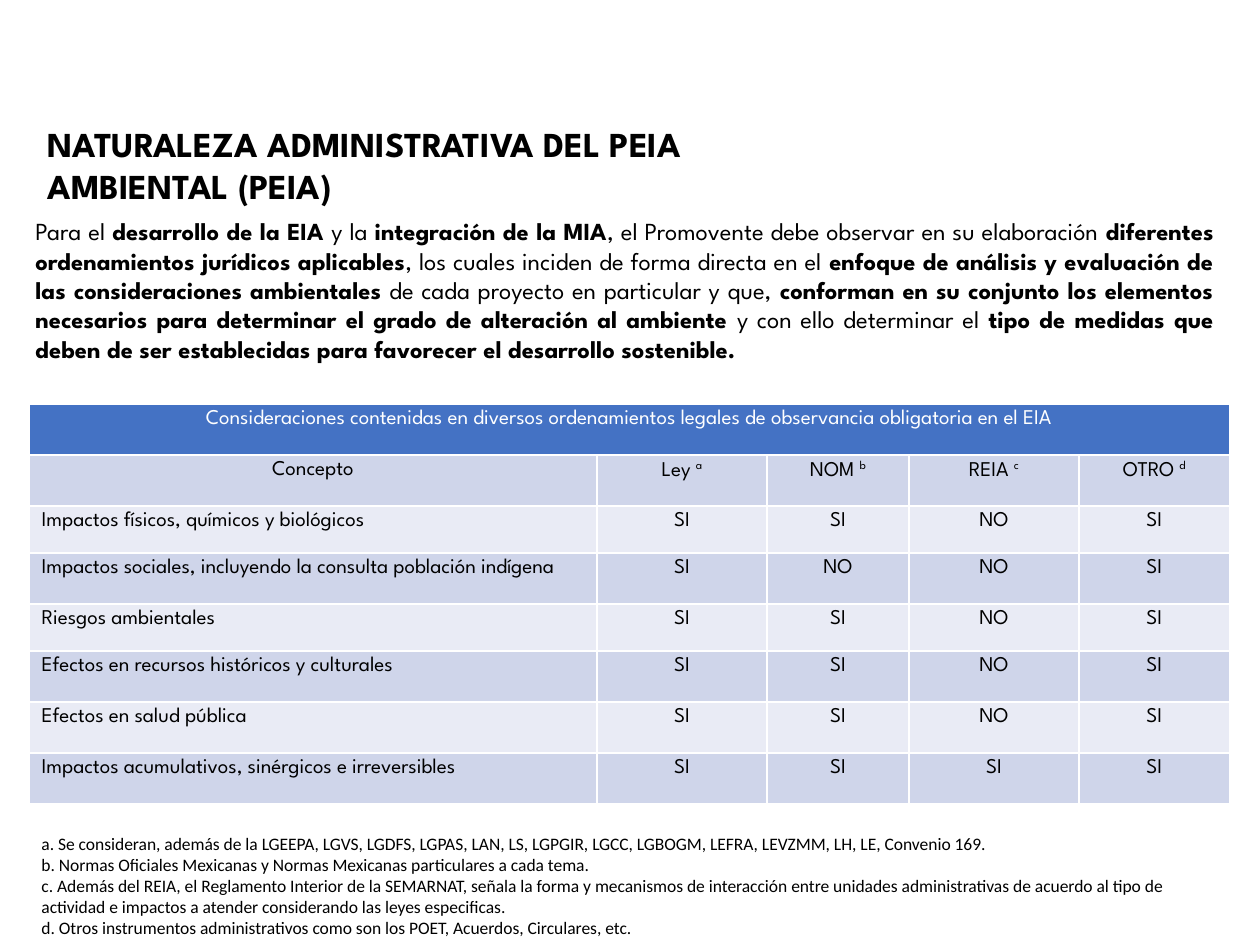
from dataclasses import dataclass

from lxml.etree import SubElement
from pptx import Presentation
from pptx.dml.color import RGBColor
from pptx.enum.shapes import MSO_SHAPE
from pptx.enum.text import MSO_ANCHOR, PP_ALIGN
from pptx.oxml.ns import qn
from pptx.util import Emu, Pt

PX = 914400 / 126


def px(length):
    """Turn whole pixels into EMU."""
    return Emu(round(length * PX))


@dataclass(frozen=True)
class Theme:
    """Colours, fonts and type sizes of the slide."""
    ink: str = "000000"
    paper: str = "FFFFFF"
    header: str = "4472C4"
    bands: tuple = ("CFD5EA", "E9EBF5")
    display: str = "League Spartan"
    small_print: str = "Calibri"
    title_size: int = 20
    body_size: int = 14
    table_size: int = 12
    small_size: int = 10


class SlideBuilder:
    """Draws each kind of element on one slide in one style."""

    def __init__(self, slide, theme):
        """Keep the slide and its theme."""
        self.slide = slide
        self.theme = theme

    def style(self, paragraph, size, font=None, color=None, bold=False, align=PP_ALIGN.LEFT):
        """Set the alignment and font of a paragraph."""
        paragraph.alignment = align
        paragraph.font.name = font or self.theme.display
        paragraph.font.size = Pt(size)
        paragraph.font.bold = bold
        paragraph.font.color.rgb = RGBColor.from_string(color or self.theme.ink)

    def lines(self, frame, texts, size, **look):
        """Write one styled paragraph for each text."""
        frame.word_wrap = True
        for index, text in enumerate(texts):
            paragraph = frame.add_paragraph() if index else frame.paragraphs[0]
            paragraph.text = text
            self.style(paragraph, size, **look)

    def title(self, box, texts):
        """Add the bold heading."""
        frame = self.slide.shapes.add_textbox(*map(px, box)).text_frame
        self.lines(frame, texts, self.theme.title_size, bold=True)

    def body(self, box, phrases):
        """Add a justified paragraph that alternates regular and bold phrases."""
        frame = self.slide.shapes.add_textbox(*map(px, box)).text_frame
        frame.word_wrap = True
        paragraph = frame.paragraphs[0]
        self.style(paragraph, self.theme.body_size, align=PP_ALIGN.JUSTIFY)
        for index, phrase in enumerate(phrases):
            run = paragraph.add_run()
            run.text = phrase
            run.font.bold = index % 2 == 1

    def footnotes(self, box, texts):
        """Add the footnotes on a plain rectangle."""
        panel = self.slide.shapes.add_shape(MSO_SHAPE.RECTANGLE, *map(px, box))
        panel.shadow.inherit = False
        panel.fill.solid()
        panel.fill.fore_color.rgb = RGBColor.from_string(self.theme.paper)
        panel.line.fill.background()
        panel.text_frame.vertical_anchor = MSO_ANCHOR.TOP
        self.lines(panel.text_frame, texts, self.theme.small_size, font=self.theme.small_print)

    def cell(self, cell, text, fill, mark="", **look):
        """Fill, border and write one cell, with an optional superscript mark."""
        properties = cell._tc.get_or_add_tcPr()
        for side in ("a:lnL", "a:lnR", "a:lnT", "a:lnB"):
            border = SubElement(properties, qn(side), w=str(Pt(1)))
            SubElement(SubElement(border, qn("a:solidFill")), qn("a:srgbClr"), val=self.theme.paper)
        cell.fill.solid()
        cell.fill.fore_color.rgb = RGBColor.from_string(fill)
        self.lines(cell.text_frame, [text], self.theme.table_size, **look)
        if mark:
            superscript = cell.text_frame.paragraphs[0].add_run()
            superscript.text = mark
            superscript._r.get_or_add_rPr().set("baseline", "30000")

    def table(self, box, widths, heights, caption, headings, rows):
        """Add a captioned table with banded rows."""
        grid = self.slide.shapes.add_table(len(heights), len(widths), *map(px, box)).table
        grid.first_row = grid.horz_banding = False
        for column, width in zip(grid.columns, widths):
            column.width = px(width)
        for row, height in zip(grid.rows, heights):
            row.height = px(height)
        grid.cell(0, 0).merge(grid.cell(0, len(widths) - 1))
        self.cell(grid.cell(0, 0), caption, self.theme.header,
                  color=self.theme.paper, align=PP_ALIGN.CENTER)
        for c, (heading, mark) in enumerate(headings):
            self.cell(grid.cell(1, c), heading, self.theme.bands[0], mark, align=PP_ALIGN.CENTER)
        for r, (concept, answers) in enumerate(rows, start=2):
            for c, text in enumerate([concept, *answers.split()]):
                self.cell(grid.cell(r, c), text, self.theme.bands[(r - 1) % 2],
                          align=PP_ALIGN.CENTER if c else PP_ALIGN.LEFT)


def main():
    """Build the slide and save it."""
    deck = Presentation()
    deck.slide_width, deck.slide_height = px(1260), px(945)
    builder = SlideBuilder(deck.slides.add_slide(deck.slide_layouts[6]), Theme())

    builder.title((35, 116, 1191, 97), ["NATURALEZA ADMINISTRATIVA DEL PEIA", "AMBIENTAL (PEIA)"])
    builder.body((23, 210, 1203, 190), [
        "Para el ", "desarrollo de la EIA ", "y la ", "integración de la MIA",
        ", el Promovente debe observar en su elaboración ",
        "diferentes ordenamientos jurídicos aplicables",
        ", los cuales inciden de forma directa en el ",
        "enfoque de análisis y evaluación de las consideraciones ambientales",
        " de cada proyecto en particular y que, ",
        "conforman en su conjunto los elementos necesarios para determinar "
        "el grado de alteración al ambiente ",
        "y con ello determinar el ",
        "tipo de medidas que deben de ser establecidas para favorecer el desarrollo sostenible.",
    ])
    builder.table(
        (29, 404, 1201, 400),
        widths=[568, 170, 142, 170, 151],
        heights=[51, 51, 47, 51, 47, 51, 51, 51],
        caption="Consideraciones contenidas en diversos ordenamientos legales "
                "de observancia obligatoria en el EIA",
        headings=[("Concepto", ""), ("Ley ", "a"), ("NOM ", "b"), ("REIA ", "c"), ("OTRO ", "d")],
        rows=[
            ("Impactos físicos, químicos y biológicos", "SI SI NO SI"),
            ("Impactos sociales, incluyendo la consulta población indígena", "SI NO NO SI"),
            ("Riesgos ambientales", "SI SI NO SI"),
            ("Efectos en recursos históricos y culturales", "SI SI NO SI"),
            ("Efectos en salud pública", "SI SI NO SI"),
            ("Impactos acumulativos, sinérgicos e irreversibles", "SI SI SI SI"),
        ],
    )
    builder.footnotes((29, 827, 1203, 118), [
        "a. Se consideran, además de la LGEEPA, LGVS, LGDFS, LGPAS, LAN, LS, LGPGIR, LGCC, "
        "LGBOGM, LEFRA, LEVZMM, LH, LE, Convenio 169.",
        "b. Normas Oficiales Mexicanas y Normas Mexicanas particulares a cada tema.",
        "c. Además del REIA, el Reglamento Interior de la SEMARNAT, señala la forma y mecanismos "
        "de interacción entre unidades administrativas de acuerdo al tipo de actividad e impactos "
        "a atender considerando las leyes especificas.",
        "d. Otros instrumentos administrativos como son los POET, Acuerdos, Circulares, etc.",
    ])
    deck.save("out.pptx")


if __name__ == "__main__":
    main()
